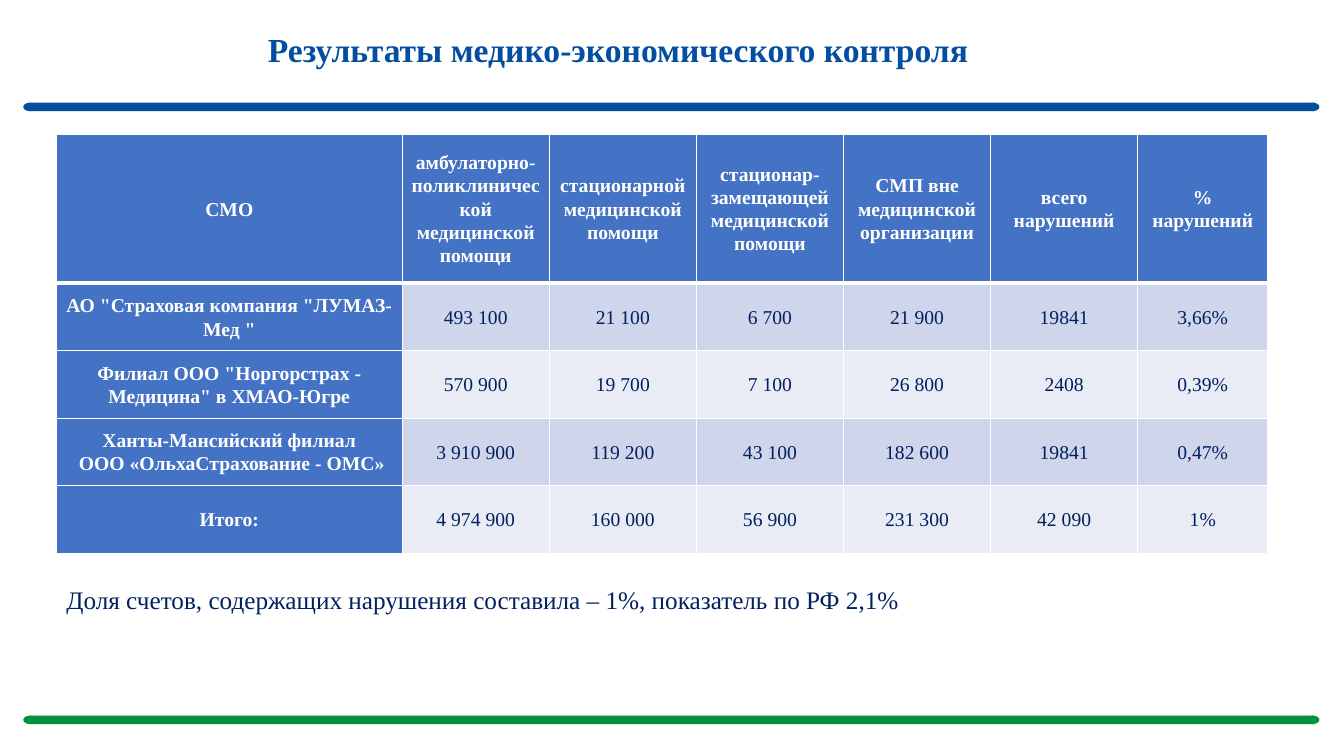
import pptx
import pptx.util
import pptx.dml.color
import pptx.enum.shapes
import pptx.enum.text
import pptx.oxml
import pptx.oxml.ns
from dataclasses import dataclass

Pt = pptx.util.Pt
Align = pptx.enum.text.PP_ALIGN
Anchor = pptx.enum.text.MSO_ANCHOR
Preset = pptx.enum.shapes.MSO_SHAPE

# Content
TITLE = "Результаты медико-экономического контроля"
HEADER = [
    "СМО",
    "амбулаторно- поликлинической медицинской помощи",
    "стационарной медицинской помощи",
    "стационар- замещающей медицинской помощи",
    "СМП вне медицинской организации",
    "всего нарушений",
    "% нарушений",
]
ROWS = [
    ['АО "Страховая компания "ЛУМАЗ-Мед "',
     "493 100", "21 100", "6 700", "21 900", "19841", "3,66%"],
    ['Филиал ООО "Норгорстрах - Медицина" в ХМАО-Югре',
     "570 900", "19 700", "7 100", "26 800", "2408", "0,39%"],
    ["Ханты-Мансийский филиал\n ООО «ОльхаСтрахование - ОМС»",
     "3 910 900", "119 200", "43 100", "182 600", "19841", "0,47%"],
    ["Итого:",
     "4 974 900", "160 000", "56 900", "231 300", "42 090", "1%"],
]
NOTE = "Доля счетов, содержащих нарушения составила – 1%, показатель по РФ 2,1%"


@dataclass(frozen=True)
class Theme:
    font: str = "Times New Roman"
    blue: str = "034EA1"
    green: str = "009240"
    navy: str = "002060"
    white: str = "FFFFFF"
    head: str = "4472C4"
    bands: tuple = ("CFD5EA", "E9EBF5")
    title_size: int = 24
    table_size: int = 14
    note_size: int = 18


THEME = Theme()

# Layout in points
SLIDE_SIZE = (960, 540)
TITLE_BOX = (35.3, 18, 812.2, 38)
TABLE_ORIGIN = (40.3, 95.8)
COLUMN_WIDTHS = [247] + [105.1] * 5 + [92.9]
ROW_HEIGHTS = [106.6] + [48.2] * len(ROWS)
NOTE_BOX = (40.3, 414, 648.7, 29)
BAR_LEFT, BAR_WIDTH, BAR_HEIGHT = 20.9, 918, 6
CAP_LEFTS, CAP_WIDTH = (16.6, 933.1), 9.4
BARS = [(73.4, THEME.blue), (511.2, THEME.green)]


def color(value):
    return pptx.dml.color.RGBColor.from_string(value)


def points(values):
    return [Pt(value) for value in values]


def write(paragraph, text, size, text_color, bold=False):
    for index, line in enumerate(text.split("\n")):
        if index:
            paragraph.add_line_break()
        run = paragraph.add_run()
        run.text = line
        run.font.name = THEME.font
        run.font.size = Pt(size)
        run.font.bold = bold
        run.font.color.rgb = color(text_color)


def add_bar(slide, top, bar_color):
    group = slide.shapes.add_group_shape()
    parts = [(Preset.RECTANGLE, BAR_LEFT, BAR_WIDTH)]
    parts += [(Preset.OVAL, left, CAP_WIDTH) for left in CAP_LEFTS]
    for preset, left, width in parts:
        shape = group.shapes.add_shape(
            preset, *points((left, top, width, BAR_HEIGHT)))
        shape.shadow.inherit = False
        shape.fill.solid()
        shape.fill.fore_color.rgb = color(bar_color)
        shape.line.fill.background()


def set_borders(cell, top, bottom):
    properties = cell._tc.get_or_add_tcPr()
    sides = [("lnL", 1), ("lnR", 1), ("lnT", top), ("lnB", bottom)]
    for index, (side, width) in enumerate(sides):
        properties.insert(index, pptx.oxml.parse_xml(
            f'<a:{side} {pptx.oxml.ns.nsdecls("a")} w="{Pt(width)}">'
            f'<a:solidFill><a:srgbClr val="{THEME.white}"/></a:solidFill>'
            f'</a:{side}>'))


def add_results_table(slide):
    table = slide.shapes.add_table(
        len(ROW_HEIGHTS), len(COLUMN_WIDTHS), *points(TABLE_ORIGIN),
        Pt(sum(COLUMN_WIDTHS)), Pt(sum(ROW_HEIGHTS))).table
    for column, width in zip(table.columns, COLUMN_WIDTHS):
        column.width = Pt(width)
    for row, height in zip(table.rows, ROW_HEIGHTS):
        row.height = Pt(height)
    for row_index, values in enumerate([HEADER] + ROWS):
        for column_index, text in enumerate(values):
            cell = table.cell(row_index, column_index)
            is_head = row_index == 0 or column_index == 0
            fill = THEME.head if is_head else THEME.bands[(row_index - 1) % 2]
            cell.fill.solid()
            cell.fill.fore_color.rgb = color(fill)
            set_borders(cell, top=3 if row_index == 1 else 1,
                        bottom=3 if row_index == 0 else 1)
            cell.margin_left = cell.margin_right = Pt(5)
            cell.margin_top = cell.margin_bottom = Pt(0)
            cell.vertical_anchor = Anchor.MIDDLE
            paragraph = cell.text_frame.paragraphs[0]
            paragraph.alignment = Align.CENTER
            paragraph.line_spacing = 1.07
            write(paragraph, text, THEME.table_size,
                  THEME.white if is_head else THEME.navy, is_head)


def main():
    presentation = pptx.Presentation()
    presentation.slide_width, presentation.slide_height = points(SLIDE_SIZE)
    slide = presentation.slides.add_slide(presentation.slide_layouts[5])

    # Rules at the top and bottom
    for top, bar_color in BARS:
        add_bar(slide, top, bar_color)

    # Title
    title = slide.shapes.title
    title.left, title.top, title.width, title.height = points(TITLE_BOX)
    title.text_frame.vertical_anchor = Anchor.MIDDLE
    paragraph = title.text_frame.paragraphs[0]
    paragraph.alignment = Align.CENTER
    paragraph.line_spacing = 0.9
    write(paragraph, TITLE, THEME.title_size, THEME.blue, bold=True)

    # Table
    add_results_table(slide)

    # Note under the table
    note = slide.shapes.add_textbox(*points(NOTE_BOX))
    note.text_frame.word_wrap = True
    note.text_frame.auto_size = pptx.enum.text.MSO_AUTO_SIZE.SHAPE_TO_FIT_TEXT
    write(note.text_frame.paragraphs[0], NOTE, THEME.note_size, THEME.navy)

    presentation.save("out.pptx")


if __name__ == "__main__":
    main()
